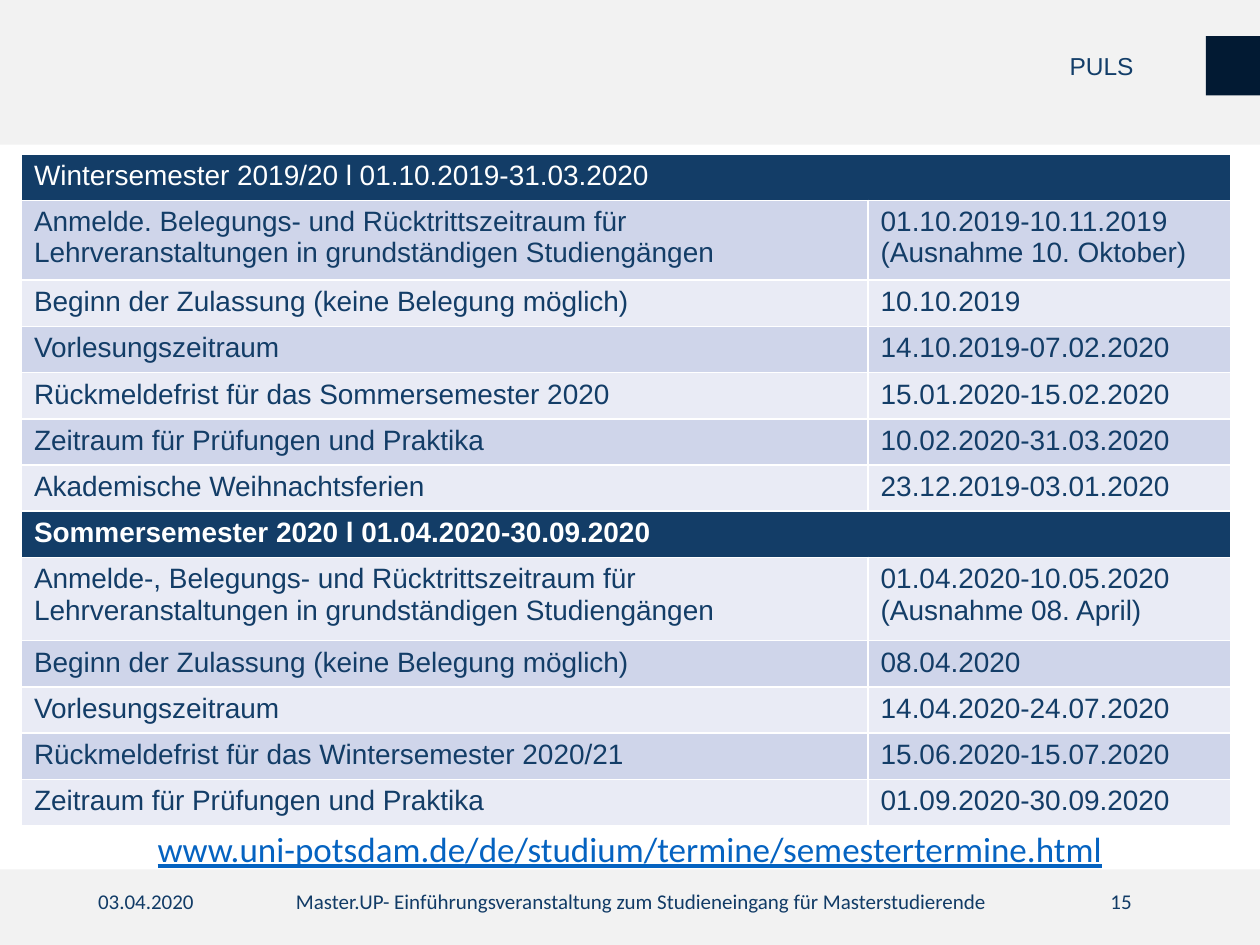
from lxml import etree
from pptx import Presentation
from pptx.dml.color import RGBColor
from pptx.enum.shapes import MSO_SHAPE
from pptx.enum.text import MSO_ANCHOR, PP_ALIGN
from pptx.oxml.ns import qn
from pptx.util import Inches, Pt

RECTANGLE = MSO_SHAPE.RECTANGLE
TOP, MIDDLE = MSO_ANCHOR.TOP, MSO_ANCHOR.MIDDLE
LEFT, CENTER, RIGHT = PP_ALIGN.LEFT, PP_ALIGN.CENTER, PP_ALIGN.RIGHT

WHITE = RGBColor(0xFF, 0xFF, 0xFF)
BAND_GREY = RGBColor(0xF2, 0xF2, 0xF2)
NAVY = RGBColor(0x13, 0x3D, 0x67)
TITLE_BLUE = RGBColor(0x13, 0x3E, 0x69)
FOOTER_BLUE = RGBColor(0x11, 0x3B, 0x66)
MARKER_BLUE = RGBColor(0x02, 0x1A, 0x33)
LINK_BLUE = RGBColor(0x05, 0x63, 0xC1)
ROW_FILLS = (RGBColor(0xE9, 0xEB, 0xF5), RGBColor(0xCF, 0xD5, 0xEA))  # even, odd

SLIDE_WIDTH, SLIDE_HEIGHT = 10, 7.5
COLUMN_SHARES = (0.7, 0.3)
ROW_HEIGHT = 0.35
TALL_ROWS = {1: 0.6, 8: 0.66}

TITLE_FONT = {"name": "Arial", "size": Pt(14)}
TABLE_FONT = {"name": "Arial", "size": Pt(16)}
FOOTER_FONT = {"name": "Calibri", "size": Pt(12)}
LINK_FONT = {"name": "Calibri", "size": Pt(20), "underline": True}

COURSE_PERIOD = (" Belegungs- und Rücktrittszeitraum für "
                 "Lehrveranstaltungen in grundständigen Studiengängen")
ADMISSION = "Beginn der Zulassung (keine Belegung möglich)"
LECTURES = "Vorlesungszeitraum"
EXAMS = "Zeitraum für Prüfungen und Praktika"

# A row with one entry is a semester heading
SEMESTER_DATES = [
    ("Wintersemester 2019/20 l 01.10.2019-31.03.2020",),
    ("Anmelde." + COURSE_PERIOD, "01.10.2019-10.11.2019\n(Ausnahme 10. Oktober)"),
    (ADMISSION, "10.10.2019"),
    (LECTURES, "14.10.2019-07.02.2020"),
    ("Rückmeldefrist für das Sommersemester 2020", "15.01.2020-15.02.2020"),
    (EXAMS, "10.02.2020-31.03.2020"),
    ("Akademische Weihnachtsferien", "23.12.2019-03.01.2020"),
    ("Sommersemester 2020 l 01.04.2020-30.09.2020",),
    ("Anmelde-," + COURSE_PERIOD, "01.04.2020-10.05.2020\v(Ausnahme 08. April)"),
    (ADMISSION, "08.04.2020"),
    (LECTURES, "14.04.2020-24.07.2020"),
    ("Rückmeldefrist für das Wintersemester 2020/21", "15.06.2020-15.07.2020"),
    (EXAMS, "01.09.2020-30.09.2020"),
]


def part_of(box, left, top, width, height):
    """Return a part of the box, given as shares of its size."""
    x, y, w, h = box
    return x + left * w, y + top * h, width * w, height * h


def in_inches(box):
    return [Inches(length) for length in box]


def write(frame, text, font, color, align=LEFT):
    frame.text = text
    for paragraph in frame.paragraphs:
        paragraph.alignment = align
        for run in paragraph.runs:
            for attribute, value in font.items():
                setattr(run.font, attribute, value)
            run.font.color.rgb = color


def add_block(slide, box, color):
    block = slide.shapes.add_shape(RECTANGLE, *in_inches(box))
    block.shadow.inherit = False
    block.fill.solid()
    block.fill.fore_color.rgb = color
    block.line.fill.background()


def add_label(slide, box, text, font, color, align=LEFT, anchor=TOP):
    frame = slide.shapes.add_textbox(*in_inches(box)).text_frame
    frame.word_wrap = True
    frame.vertical_anchor = anchor
    write(frame, text, font, color, align)
    return frame


def add_header(slide, box):
    add_block(slide, box, BAND_GREY)
    title = add_label(slide, part_of(box, 0.839, 0.15, 0.137, 0.64), "PULS",
                      TITLE_FONT, TITLE_BLUE, anchor=MIDDLE)
    title.paragraphs[0].line_spacing = 0.9
    add_block(slide, part_of(box, 0.957, 0.25, 0.043, 0.41), MARKER_BLUE)


def add_footer(slide, box):
    add_block(slide, box, BAND_GREY)
    for left, width, text, align in (
        (0.068, 0.225, "03.04.2020", LEFT),
        (0.225, 0.605, "Master.UP- Einführungsveranstaltung zum "
                       "Studieneingang für Masterstudierende", LEFT),
        (0.683, 0.225, "15", RIGHT),
    ):
        add_label(slide, part_of(box, left, 0.17, width, 0.66), text,
                  FOOTER_FONT, FOOTER_BLUE, align)


def add_borders(cell):
    properties = cell._tc.get_or_add_tcPr()
    for index, side in enumerate(("a:lnL", "a:lnR", "a:lnT", "a:lnB")):
        border = etree.Element(qn(side), w=str(Pt(1)))
        fill = etree.SubElement(border, qn("a:solidFill"))
        etree.SubElement(fill, qn("a:srgbClr"), val=str(WHITE))
        properties.insert(index, border)


def add_dates_table(slide, box):
    table = slide.shapes.add_table(len(SEMESTER_DATES), len(COLUMN_SHARES),
                                   *in_inches(box)).table
    for column, share in zip(table.columns, COLUMN_SHARES):
        column.width = Inches(box[2] * share)
    for index, entries in enumerate(SEMESTER_DATES):
        table.rows[index].height = Inches(TALL_ROWS.get(index, ROW_HEIGHT))
        is_heading = len(entries) == 1
        row_fill = NAVY if is_heading else ROW_FILLS[index % 2]
        text_color = WHITE if is_heading else NAVY
        # Only the second semester's heading is bold
        font = TABLE_FONT | {"bold": is_heading and index > 0}
        cells = [table.cell(index, column) for column in range(len(COLUMN_SHARES))]
        if is_heading:
            cells[0].merge(cells[-1])
        for cell in cells:
            cell.fill.solid()
            cell.fill.fore_color.rgb = row_fill
            add_borders(cell)
        for cell, entry in zip(cells, entries):
            write(cell.text_frame, entry, font, text_color)


def main():
    presentation = Presentation()
    presentation.slide_width = Inches(SLIDE_WIDTH)
    presentation.slide_height = Inches(SLIDE_HEIGHT)
    slide = presentation.slides.add_slide(presentation.slide_layouts[6])
    page = (0, 0, SLIDE_WIDTH, SLIDE_HEIGHT)

    add_footer(slide, part_of(page, 0, 0.92, 1, 0.08))
    add_header(slide, part_of(page, 0, 0, 1, 0.153))
    add_label(slide, part_of(page, 0, 0.869, 1, 0.059),
              "www.uni-potsdam.de/de/studium/termine/semestertermine.html",
              LINK_FONT, LINK_BLUE, CENTER)
    add_dates_table(slide, part_of(page, 0.017, 0.163, 0.96, 0.71))
    presentation.save("out.pptx")


if __name__ == "__main__":
    main()
